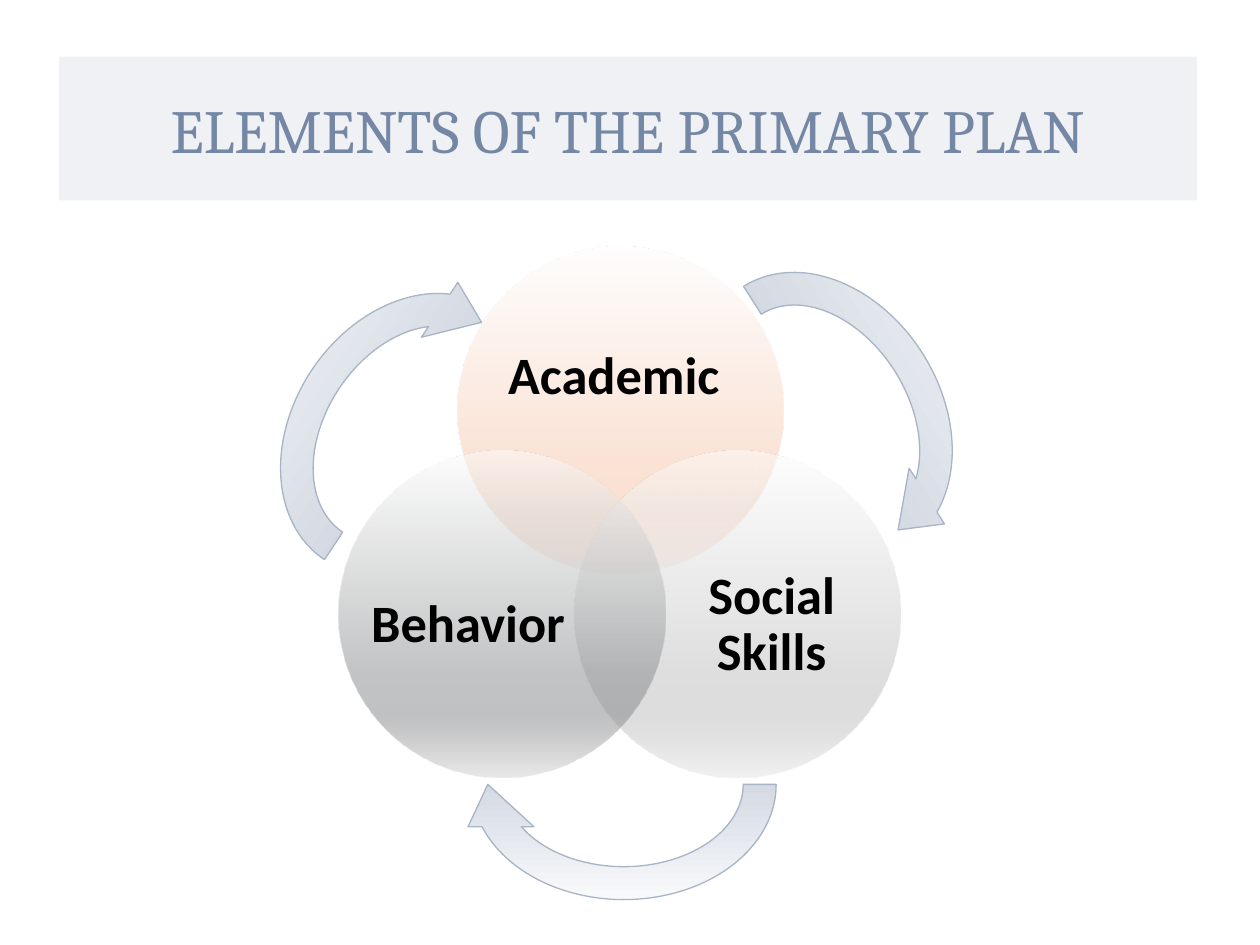
import pptx
import pptx.util
import pptx.dml.color
import pptx.enum.shapes
import pptx.enum.text
import pptx.oxml.ns
from lxml import etree

Inches, Pt = pptx.util.Inches, pptx.util.Pt
RGB = pptx.dml.color.RGBColor
SHAPE = pptx.enum.shapes.MSO_SHAPE
MIDDLE = pptx.enum.text.MSO_ANCHOR.MIDDLE
CENTER = pptx.enum.text.PP_ALIGN.CENTER

BAND = RGB(0xEF, 0xF1, 0xF4)
SLATE = RGB(0x74, 0x88, 0xA5)
EDGE = RGB(0xA8, 0xB5, 0xC6)
BLACK = RGB(0, 0, 0)


def shades(*codes):
    return [RGB.from_string(code) for code in codes]


# Five shades per gradient, top to bottom
STOPS = (0, 68, 81, 86, 100)
BLUES = shades("FEFEFF", "C4CCD8", "C2CAD7", "C8CFDA", "E7EAEE")
PEACH = shades("FFFEFE", "F7C7AB", "F6C5A8", "F7CAB0", "FBE8DE")
LIGHT = shades("FEFEFE", "BFBFBF", "BDBDBD", "C3C3C3", "E5E5E5")
DARK = shades("FEFEFE", "888A8C", "838587", "929395", "D4D4D5")

SIZE = 2.59  # circle diameter
# Circle left and top, shades, label, label box
CIRCLES = [
    (3.63, 1.96, PEACH, "Academic ", (3.97, 2.41, 1.9, 1.17)),
    (4.56, 3.58, LIGHT, "Social Skills", (5.35, 4.25, 1.55, 1.43)),
    (2.69, 3.58, DARK, "Behavior", (2.94, 4.25, 1.55, 1.43)),
]
# Arrow box and turn
ARROWS = [
    ((5.21, 2.25, 2.68, 2.09), 57.6),
    ((3.61, 5.18, 2.68, 2.09), 180),
    ((1.91, 2.4, 2.65, 2.09), 303.5),
]


def inches(box):
    return [Inches(value) for value in box]


def set_font(para, name, size, color, bold=False):
    para.alignment = CENTER
    font = para.font
    font.name, font.size, font.bold = name, Pt(size), bold
    font.color.rgb = color


def add_child(parent, tag, **attrs):
    return etree.SubElement(parent, pptx.oxml.ns.qn(tag), attrs)


def fill_shades(shape, colors, alpha=100):
    """Fill with a downward gradient of the given opacity."""
    shape.fill.gradient()
    grad = shape._element.spPr.find(pptx.oxml.ns.qn("a:gradFill"))
    for child in list(grad):
        grad.remove(child)
    grad.set("rotWithShape", "1")
    stops = add_child(grad, "a:gsLst")
    for pos, color in zip(STOPS, colors):
        stop = add_child(stops, "a:gs", pos=str(pos * 1000))
        tint = add_child(stop, "a:srgbClr", val=str(color))
        if alpha < 100:
            add_child(tint, "a:alpha", val=str(alpha * 1000))
    add_child(grad, "a:lin", ang="5400000", scaled="0")


def set_title(slide, text):
    title = slide.shapes.title
    title.left, title.top, title.width, title.height = inches(
        (0.47, 0.45, 9.03, 1.14))
    title.fill.solid()
    title.fill.fore_color.rgb = BAND
    frame = title.text_frame
    frame.text = text
    frame.vertical_anchor = MIDDLE
    set_font(frame.paragraphs[0], "Cambria", 35, SLATE)


def add_arrow(slide, box, turn):
    arrow = slide.shapes.add_shape(SHAPE.CIRCULAR_ARROW, *inches(box))
    arrow.rotation = turn
    arrow.shadow.inherit = False
    fill_shades(arrow, BLUES)
    arrow.line.color.rgb = EDGE
    arrow.line.width = Pt(0.75)


def add_circle(slide, left, top, colors):
    circle = slide.shapes.add_shape(
        SHAPE.OVAL, *inches((left, top, SIZE, SIZE)))
    circle.shadow.inherit = False
    fill_shades(circle, colors, 50)
    circle.line.fill.background()


def add_label(slide, text, box):
    frame = slide.shapes.add_textbox(*inches(box)).text_frame
    frame.word_wrap = True
    frame.vertical_anchor = MIDDLE
    frame.margin_left = frame.margin_right = 0
    frame.margin_top = frame.margin_bottom = 0
    frame.text = text
    para = frame.paragraphs[0]
    para.line_spacing = 0.9
    set_font(para, "Calibri", 30, BLACK, True)


def main():
    deck = pptx.Presentation()
    deck.slide_width, deck.slide_height = Inches(10), Inches(7.5)
    slide = deck.slides.add_slide(deck.slide_layouts[5])

    set_title(slide, "ELEMENTS OF THE PRIMARY PLAN")

    # Cycle around the circles
    for box, turn in ARROWS:
        add_arrow(slide, box, turn)

    # Overlapping circles with labels
    for left, top, colors, text, box in CIRCLES:
        add_circle(slide, left, top, colors)
        add_label(slide, text, box)

    deck.save("out.pptx")


if __name__ == "__main__":
    main()
